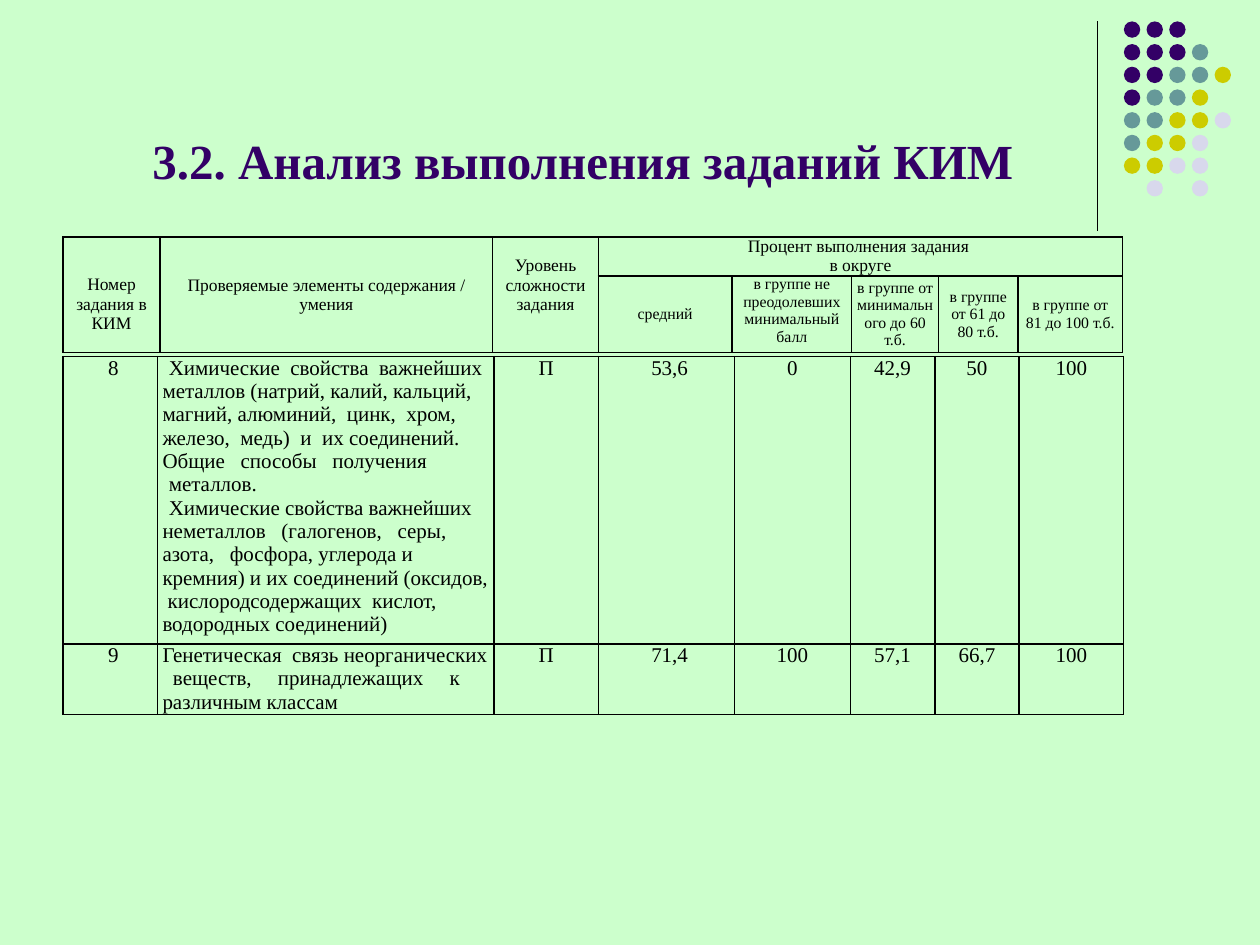
from dataclasses import dataclass
from typing import Optional

from lxml.etree import SubElement
from pptx import Presentation
from pptx.dml.color import RGBColor
from pptx.enum.shapes import MSO_CONNECTOR, MSO_SHAPE
from pptx.enum.text import MSO_ANCHOR as ANCHOR, PP_ALIGN as ALIGN
from pptx.oxml import parse_xml
from pptx.oxml.ns import nsdecls, qn
from pptx.util import Inches, Pt

FONT = "Times New Roman"
COLORS = {
    "background": "CCFFCC",
    "text": "000000",
    "purple": "330066",
    "teal": "669999",
    "olive": "CCCC00",
    "lavender": "D8D8EC",
}
DOT_COLORS = {"P": "purple", "T": "teal", "O": "olive", "L": "lavender"}
DOT_ROWS = ["PPP", "PPPT", "PPTTO", "PTTO", "TTOOL", "TOOL", "OOLL", " L L"]
DOT_LEFT, DOT_TOP, DOT_SIZE, DOT_PITCH = 8.92, 0.17, 0.13, 0.18
TABLE_LEFT, TABLE_WIDTH = 0.5, 8.42


@dataclass
class CellText:
    """Text of one cell; lengths in inches, size in points."""
    row: int
    col: int
    paragraphs: list[str]
    size: float
    span: tuple[int, int] = (1, 1)
    align: Optional[ALIGN] = ALIGN.CENTER
    anchor: ANCHOR = ANCHOR.TOP
    indent: float = 0
    pad_top: float = 0
    pad_bottom: float = 0


@dataclass
class TableSpec:
    top: float
    col_widths: list[float]
    row_heights: list[float]
    cells: list[CellText]


HEADER_CELLS = [
    CellText(0, 0, ["Номер", "задания в КИМ"], 10, (2, 1), anchor=ANCHOR.MIDDLE, pad_top=0.15),
    CellText(0, 1, ["Проверяемые элементы содержания / умения"], 10, (2, 1),
             anchor=ANCHOR.MIDDLE),
    CellText(0, 2, ["Уровень сложности задания"], 10, (2, 1), anchor=ANCHOR.MIDDLE,
             pad_bottom=0.15),
    CellText(0, 3, ["Процент выполнения задания \nв округе"], 10, (1, 5)),
    CellText(1, 3, ["средний"], 9, anchor=ANCHOR.MIDDLE),
    CellText(1, 4, ["в группе не преодолевших минимальный балл"], 9),
    CellText(1, 5, ["в группе от минимального до 60 т.б."], 9, anchor=ANCHOR.MIDDLE),
    CellText(1, 6, ["в группе от 61 до 80 т.б."], 9, anchor=ANCHOR.MIDDLE),
    CellText(1, 7, ["в группе от 81 до 100 т.б."], 9, anchor=ANCHOR.MIDDLE),
]

TOPIC_8 = [
    "Химические  свойства  важнейших  металлов (натрий, калий, кальций, магний, "
    "алюминий,  цинк,  хром,  железо,  медь)  и  их соединений.   Общие   способы   получения",
    "металлов.",
    "Химические свойства важнейших неметаллов   (галогенов,   серы,   азота,   фосфора, "
    "углерода и кремния) и их соединений (оксидов,  кислородсодержащих  кислот,  "
    "водородных соединений)",
]
TOPIC_9 = [
    "Генетическая  связь неорганических   веществ,     принадлежащих     к     "
    "различным классам",
]
TASKS = [
    ["8", TOPIC_8, "П", "53,6", "0", "42,9", "50", "100"],
    ["9", TOPIC_9, "П", "71,4", "100", "57,1", "66,7", "100"],
]
TOPIC_COL = 1
TOPIC_INDENTS = [0.05, 0]
COL_INDENTS = {0: 0.05, 2: -0.08, 3: 0.05}


def task_cells() -> list[CellText]:
    cells = []
    for row, task in enumerate(TASKS):
        for col, value in enumerate(task):
            if col == TOPIC_COL:
                cells.append(CellText(row, col, value, 12, align=None,
                                      indent=TOPIC_INDENTS[row]))
            else:
                cells.append(CellText(row, col, [value], 12, indent=COL_INDENTS.get(col, 0)))
    return cells


TABLES = [
    TableSpec(1.88, [0.77, 2.64, 0.84, 1.06, 0.95, 0.69, 0.63, 0.83], [0.31, 0.61],
              HEADER_CELLS),
    TableSpec(2.83, [0.75, 2.67, 0.83, 1.08, 0.92, 0.67, 0.67, 0.83], [2.28, 0.56],
              task_cells()),
]


def rgb(name: str) -> RGBColor:
    return RGBColor.from_string(COLORS[name])


def add_run(p, text: str, size: float, color: str = "text", bold: bool = False) -> None:
    r = p.add_run()
    r.text = text
    r.font.name = FONT
    r.font.size = Pt(size)
    r.font.bold = bold
    r.font.color.rgb = rgb(color)


def set_borders(cell) -> None:
    tc_pr = cell._tc.get_or_add_tcPr()
    for i, side in enumerate(("lnL", "lnR", "lnT", "lnB")):
        tc_pr.insert(i, parse_xml(
            f'<a:{side} {nsdecls("a")} w="{Pt(1)}"><a:solidFill>'
            f'<a:srgbClr val="{COLORS["text"]}"/></a:solidFill></a:{side}>'))


def fill_cell(table, item: CellText) -> None:
    cell = table.cell(item.row, item.col)
    rows, cols = item.span
    if rows * cols > 1:
        cell.merge(table.cell(item.row + rows - 1, item.col + cols - 1))
    cell.vertical_anchor = item.anchor
    cell.margin_top, cell.margin_bottom = Inches(item.pad_top), Inches(item.pad_bottom)
    tf = cell.text_frame
    for i, text in enumerate(item.paragraphs):
        p = tf.paragraphs[0] if i == 0 else tf.add_paragraph()
        p.alignment = item.align
        if item.indent:
            p_pr = p._p.get_or_add_pPr()
            p_pr.set("marL", "0")
            p_pr.set("indent", str(Inches(item.indent)))
        for j, line in enumerate(text.split("\n")):
            if j:
                p.add_line_break()
            add_run(p, line, item.size)


def add_table(s, spec: TableSpec) -> None:
    table = s.shapes.add_table(
        len(spec.row_heights), len(spec.col_widths), Inches(TABLE_LEFT), Inches(spec.top),
        Inches(TABLE_WIDTH), Inches(sum(spec.row_heights))).table
    table.first_row = table.horz_banding = False
    for column, width in zip(table.columns, spec.col_widths):
        column.width = Inches(width)
    for row, height in zip(table.rows, spec.row_heights):
        row.height = Inches(height)
    for cell in table.iter_cells():
        cell.fill.background()
        cell.margin_left = cell.margin_right = Inches(0.04)
        cell.margin_top = cell.margin_bottom = 0
        set_borders(cell)
    for item in spec.cells:
        fill_cell(table, item)


def add_title(s, text: str) -> None:
    sp = s.shapes.title
    sp.left, sp.top, sp.width, sp.height = (Inches(v) for v in (0.5, 0.13, 8.25, 1.42))
    tf = sp.text_frame
    tf.vertical_anchor = ANCHOR.BOTTOM
    p = tf.paragraphs[0]
    p.alignment = ALIGN.CENTER
    add_run(p, text, 28, "purple", bold=True)


def add_decoration(s) -> None:
    line = s.shapes.add_connector(MSO_CONNECTOR.STRAIGHT, Inches(8.71), Inches(0.17),
                                  Inches(8.71), Inches(1.83))
    line.line.color.rgb = rgb("text")
    line.line.width = Pt(0.75)
    SubElement(line._element.spPr, qn("a:effectLst"))
    for row, pattern in enumerate(DOT_ROWS):
        for col, key in enumerate(pattern):
            if key not in DOT_COLORS:
                continue
            dot = s.shapes.add_shape(
                MSO_SHAPE.OVAL, Inches(DOT_LEFT + col * DOT_PITCH),
                Inches(DOT_TOP + row * DOT_PITCH), Inches(DOT_SIZE), Inches(DOT_SIZE))
            dot.shadow.inherit = False
            dot.fill.solid()
            dot.fill.fore_color.rgb = rgb(DOT_COLORS[key])
            dot.line.fill.background()


def main() -> None:
    prs = Presentation()
    prs.slide_width, prs.slide_height = Inches(10), Inches(7.5)
    s = prs.slides.add_slide(prs.slide_layouts[5])
    s.background.fill.solid()
    s.background.fill.fore_color.rgb = rgb("background")
    add_decoration(s)
    add_title(s, "3.2. Анализ выполнения заданий КИМ")
    for spec in TABLES:
        add_table(s, spec)
    prs.save("out.pptx")


if __name__ == "__main__":
    main()
